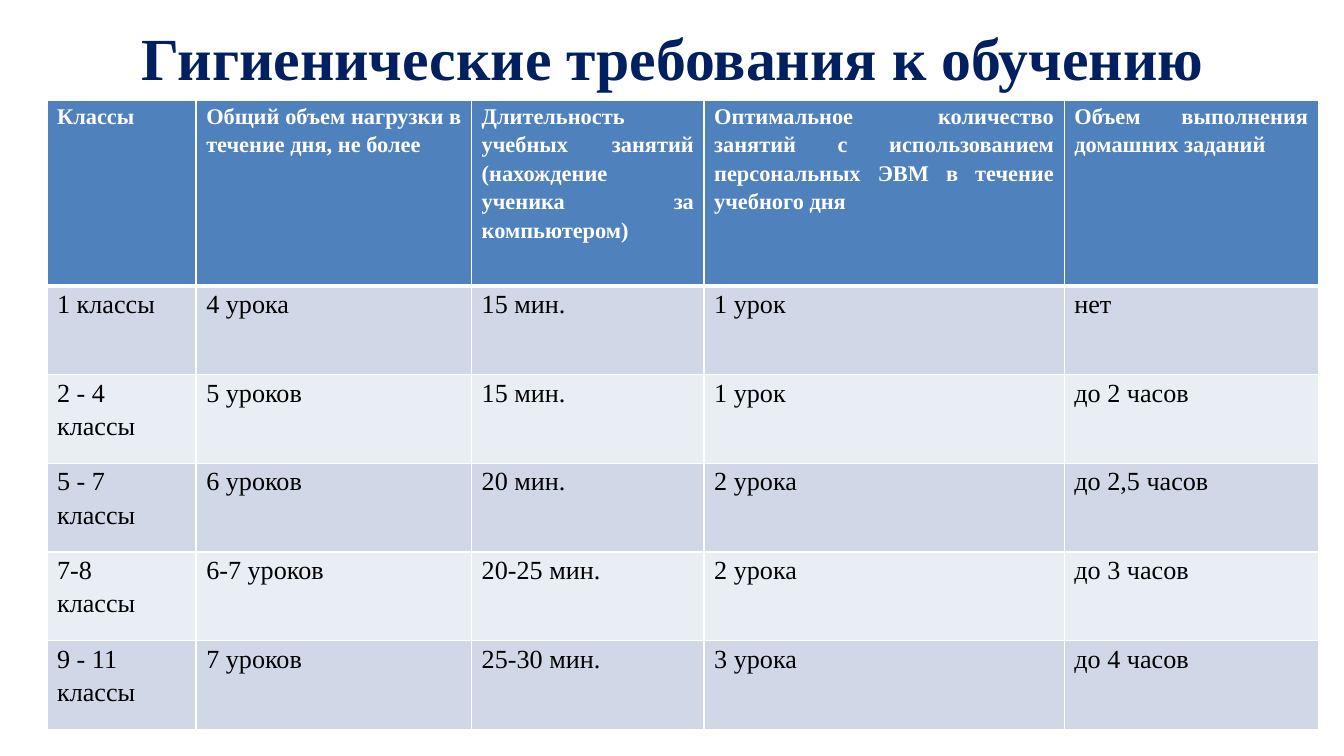
"""Build a slide with a table of hygiene rules for lessons by school grade."""
from dataclasses import dataclass

from lxml import etree
from pptx import Presentation
from pptx import util as u
from pptx.dml import color
from pptx.enum import text
from pptx.oxml import ns

WIDE = 10
HIGH = WIDE * 9 / 16


@dataclass(frozen=True)
class Theme:
    font: str = "Times New Roman"
    navy: str = "002060"
    head: str = "4F81BD"
    bands: tuple = ("D0D8E8", "E9EDF4")
    light: str = "FFFFFF"
    dark: str = "000000"
    title: int = 32
    label: int = 12
    body: int = 14


@dataclass(frozen=True)
class Box:
    left: float
    top: float
    width: float
    height: float

    def place(self) -> tuple:
        sides = (self.left * WIDE, self.top * HIGH, self.width * WIDE, self.height * HIGH)
        return tuple(u.Inches(side) for side in sides)


@dataclass(frozen=True)
class Style:
    size: int
    ink: str
    bold: bool
    fill: str
    rule: int


THEME = Theme()
TITLE = Box(0.051, 0.017, 0.9, 0.116)
GRID = Box(0.035, 0.133, 0.947, 0.83)
COLS = (1.11, 2.05, 1.73, 2.68, 1.89)
ROWS = (1.38,) + (0.66,) * 5
HEADS = (
    "Классы",
    "Общий объем нагрузки в течение дня, не более",
    "Длительность учебных занятий (нахождение ученика за компьютером)",
    "Оптимальное количество занятий с использованием персональных ЭВМ в течение учебного дня",
    "Объем выполнения домашних заданий",
)
GRADES = (
    ("1 классы", "4 урока", "15 мин.", "1 урок", "нет"),
    ("2 - 4 классы", "5 уроков", "15 мин.", "1 урок", "до 2 часов"),
    ("5 - 7 классы", "6 уроков", "20 мин.", "2 урока", "до 2,5 часов"),
    ("7-8\nклассы", "6-7 уроков", "20-25 мин.", "2 урока", "до 3 часов"),
    ("9 - 11 классы", "7 уроков", "25-30 мин.", "3 урока", "до 4 часов"),
)


def write(frame, words: str, size: int, ink: str, bold: bool, align, space: float = 1.0) -> None:
    frame.text = words
    for para in frame.paragraphs:
        para.alignment = align
        para.line_spacing = space
        for run in para.runs:
            run.font.name = THEME.font
            run.font.size = u.Pt(size)
            run.font.bold = bold
            run.font.color.rgb = color.RGBColor.from_string(ink)


def draw_title(slide, words: str) -> None:
    frame = slide.shapes.add_textbox(*TITLE.place()).text_frame
    frame.word_wrap = True
    frame.vertical_anchor = text.MSO_ANCHOR.MIDDLE
    write(frame, words, THEME.title, THEME.navy, True, text.PP_ALIGN.CENTER)


def draw_edges(cell, base: int) -> None:
    props = cell._tc.get_or_add_tcPr()
    for spot, side in enumerate(("lnL", "lnR", "lnT", "lnB")):
        width = u.Pt(base if side == "lnB" else 1)
        edge = etree.Element(ns.qn(f"a:{side}"), w=str(width))
        fill = etree.SubElement(edge, ns.qn("a:solidFill"))
        etree.SubElement(fill, ns.qn("a:srgbClr"), val=THEME.light)
        props.insert(spot, edge)


def draw_cell(cell, words: str, style: Style, align) -> None:
    cell.margin_left = cell.margin_right = u.Pt(5.4)
    cell.margin_top = cell.margin_bottom = 0
    cell.fill.solid()
    cell.fill.fore_color.rgb = color.RGBColor.from_string(style.fill)
    write(cell.text_frame, words, style.size, style.ink, style.bold, align, 1.15)
    if style.rule > 1:
        draw_edges(cell, style.rule)


def draw_table(slide) -> None:
    table = slide.shapes.add_table(len(ROWS), len(COLS), *GRID.place()).table
    for col, width in zip(table.columns, COLS):
        col.width = u.Inches(width)
    for row, height in zip(table.rows, ROWS):
        row.height = u.Inches(height)
    head = Style(THEME.label, THEME.light, True, THEME.head, 3)
    bands = [Style(THEME.body, THEME.dark, False, fill, 1) for fill in THEME.bands]
    for r, line in enumerate((HEADS,) + GRADES):
        style = bands[(r - 1) % 2] if r else head
        for c, words in enumerate(line):
            ragged = c == 0 and r > 1
            align = text.PP_ALIGN.LEFT if ragged else text.PP_ALIGN.JUSTIFY
            draw_cell(table.cell(r, c), words, style, align)


def main() -> None:
    deck = Presentation()
    deck.slide_width, deck.slide_height = u.Inches(WIDE), u.Inches(HIGH)
    slide = deck.slides.add_slide(deck.slide_layouts[6])
    draw_title(slide, "Гигиенические требования к обучению")
    draw_table(slide)
    deck.save("out.pptx")


if __name__ == "__main__":
    main()
